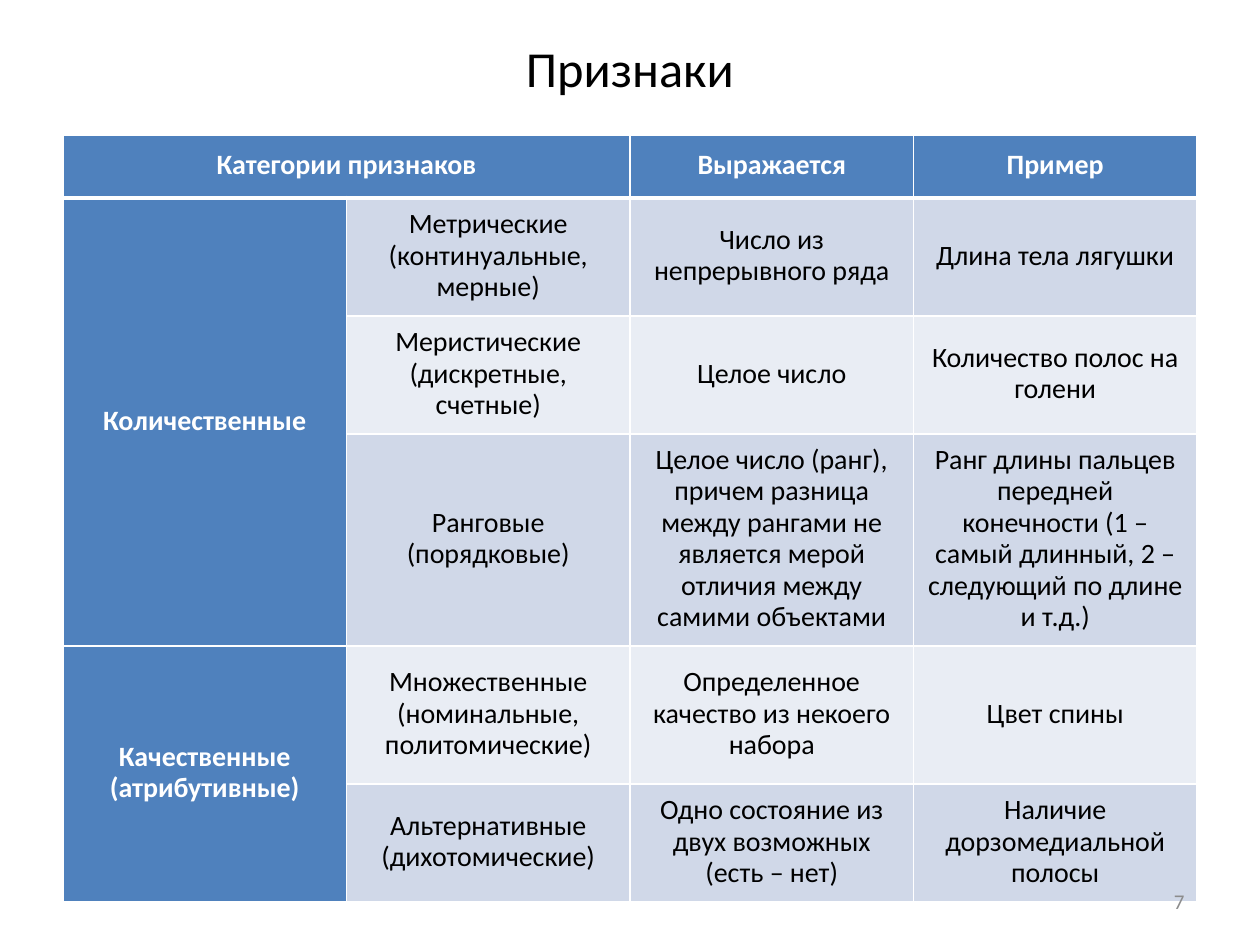
import pptx
import pptx.dml.color
import pptx.enum.text
import pptx.oxml
import pptx.oxml.ns
import pptx.util

Pt = pptx.util.Pt
ALIGN = pptx.enum.text.PP_ALIGN
MIDDLE = pptx.enum.text.MSO_ANCHOR.MIDDLE
EMU_PER_PX = 914400 / 126

BLACK, WHITE, GREY = "000000", "FFFFFF", "8C8C8C"
HEADER, BAND_DARK, BAND_LIGHT = "4F81BD", "D0D8E8", "E9EDF4"

# An empty string is a cell covered by its merged neighbour
ROWS = [
    ["Категории признаков", "", "Выражается", "Пример"],
    ["Количественные", "Метрические (континуальные, мерные)",
     "Число из непрерывного ряда", "Длина тела лягушки"],
    ["", "Меристические (дискретные, счетные)",
     "Целое число", "Количество полос на голени"],
    ["", "Ранговые\n(порядковые)",
     "Целое число (ранг), причем разница между рангами не является мерой "
     "отличия между самими объектами",
     "Ранг длины пальцев передней конечности (1 – самый длинный, "
     "2 – следующий по длине и т.д.)"],
    ["Качественные (атрибутивные)", "Множественные (номинальные, политомические)",
     "Определенное качество из некоего набора", "Цвет спины"],
    ["", "Альтернативные (дихотомические)",
     "Одно состояние из двух возможных (есть – нет)",
     "Наличие дорзомедиальной полосы"],
]
ROW_HEIGHTS = [63, 118, 118, 212, 138, 118]
MERGES = [((0, 0), (0, 1)), ((1, 0), (3, 0)), ((4, 0), (5, 0))]


def px(n):
    return pptx.util.Emu(round(n * EMU_PER_PX))


def rgb(color):
    return pptx.dml.color.RGBColor.from_string(color)


class Deck:
    font = "Calibri"

    def __init__(self, width, height):
        self.prs = pptx.Presentation()
        self.prs.slide_width, self.prs.slide_height = px(width), px(height)
        self.s = self.prs.slides.add_slide(self.prs.slide_layouts[6])

    def fill_paragraph(self, p, text, size, color, align, bold=False):
        p.alignment = align
        for i, line in enumerate(text.split("\n")):
            if i:
                p.add_line_break()
            r = p.add_run()
            r.text = line
            r.font.name, r.font.size, r.font.bold = self.font, Pt(size), bold
            r.font.color.rgb = rgb(color)

    def text(self, x, y, w, h, text, size, color, align):
        tf = self.s.shapes.add_textbox(px(x), px(y), px(w), px(h)).text_frame
        tf.word_wrap = True
        tf.vertical_anchor = MIDDLE
        self.fill_paragraph(tf.paragraphs[0], text, size, color, align)

    def borders(self, cell, top, bottom):
        tcPr = cell._tc.get_or_add_tcPr()
        widths = {"lnL": 1, "lnR": 1, "lnT": top, "lnB": bottom}
        for i, (side, width) in enumerate(widths.items()):
            tcPr.insert(i, pptx.oxml.parse_xml(
                f'<a:{side} {pptx.oxml.ns.nsdecls("a")} w="{Pt(width)}">'
                f'<a:solidFill><a:srgbClr val="{WHITE}"/></a:solidFill></a:{side}>'))

    def cell(self, cell, text, fill, color, bold):
        cell.fill.solid()
        cell.fill.fore_color.rgb = rgb(fill)
        cell.vertical_anchor = MIDDLE
        cell.margin_left = cell.margin_right = pptx.util.Inches(0.1)
        cell.margin_top = cell.margin_bottom = pptx.util.Inches(0.09)
        if text:
            p = cell.text_frame.paragraphs[0]
            p.line_spacing, p.space_after = Pt(18), Pt(7.5)
            self.fill_paragraph(p, text, 16, color, ALIGN.CENTER, bold)

    def table(self, x, y, w, rows, heights, merges):
        table = self.s.shapes.add_table(
            len(rows), len(rows[0]), px(x), px(y), px(w), px(sum(heights))).table
        for i, (row, height) in enumerate(zip(rows, heights)):
            table.rows[i].height = px(height)
            for j, text in enumerate(row):
                head = i == 0 or j == 0
                band = BAND_DARK if i % 2 else BAND_LIGHT
                cell = table.cell(i, j)
                self.cell(cell, text, HEADER if head else band,
                          WHITE if head else BLACK, head)
                self.borders(cell, 3 if i == 1 else 1, 3 if i == 0 else 1)
        for first, last in merges:
            table.cell(*first).merge(table.cell(*last))


def main():
    deck = Deck(1260, 945)
    # Title
    deck.text(63, 38, 1134, 58, "Признаки", 28.8, BLACK, ALIGN.CENTER)
    # Table of trait categories
    deck.table(63, 135, 1134, ROWS, ROW_HEIGHTS, MERGES)
    # Slide number
    deck.text(903, 876, 294, 50, "7", 12, GREY, ALIGN.RIGHT)
    deck.prs.save("out.pptx")


if __name__ == "__main__":
    main()
